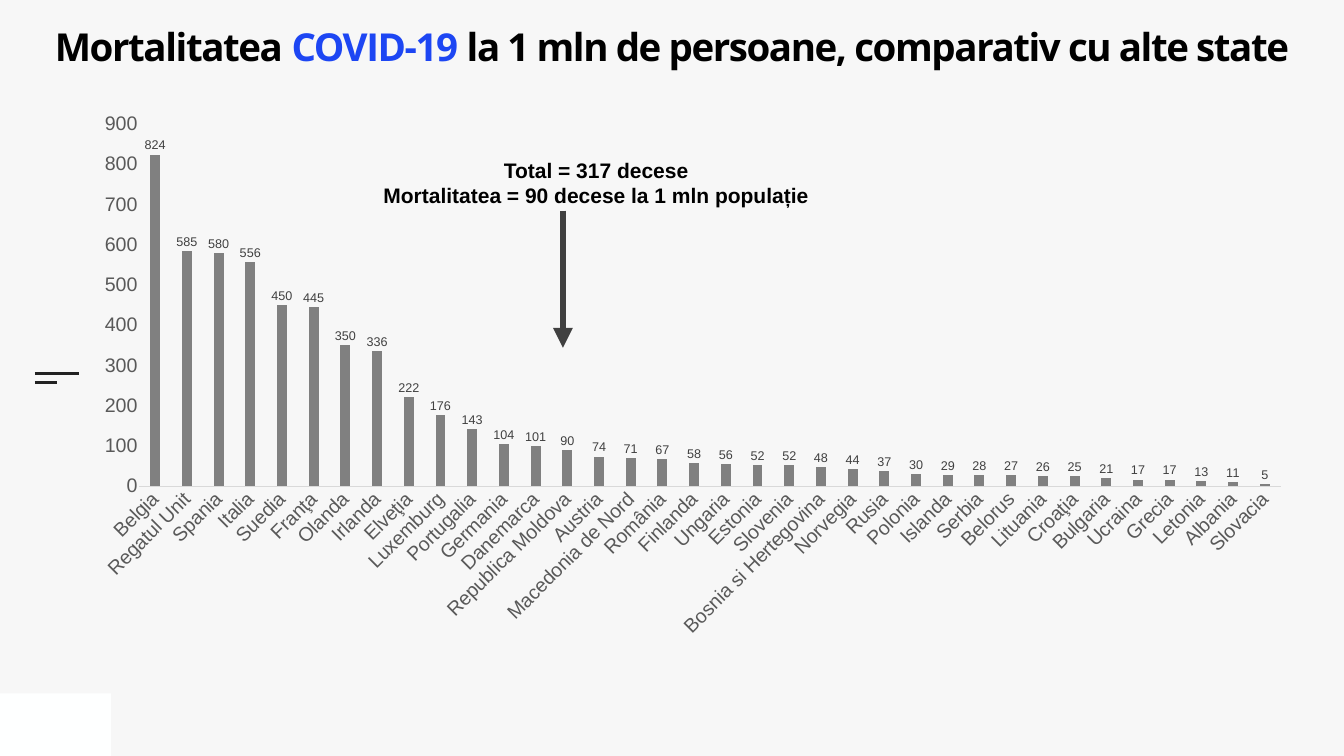
from dataclasses import dataclass

from lxml import etree
from pptx import Presentation
from pptx.chart.data import CategoryChartData
from pptx.dml.color import RGBColor
from pptx.enum.chart import XL_CHART_TYPE, XL_LABEL_POSITION, XL_TICK_MARK
from pptx.enum.shapes import MSO_CONNECTOR, MSO_SHAPE
from pptx.enum.text import MSO_ANCHOR, PP_ALIGN
from pptx.oxml.ns import qn
from pptx.util import Inches, Pt

COLUMNS = XL_CHART_TYPE.COLUMN_CLUSTERED
OUTSIDE = XL_LABEL_POSITION.OUTSIDE_END
NO_TICK = XL_TICK_MARK.NONE
STRAIGHT = MSO_CONNECTOR.STRAIGHT
RECT = MSO_SHAPE.RECTANGLE
TOP, MIDDLE = MSO_ANCHOR.TOP, MSO_ANCHOR.MIDDLE
CENTER = PP_ALIGN.CENTER


@dataclass(frozen=True)
class Theme:
    """Colours, fonts and type sizes of the slide."""
    background: str = "F7F7F7"
    corner: str = "FEFFFF"
    mark: str = "222222"
    text: str = "000000"
    accent: str = "1D46F3"
    bar: str = "808080"
    axis_text: str = "595959"
    axis_line: str = "D9D9D9"
    dark: str = "404040"
    heading_font: str = "Open Sans"
    body_font: str = "Arial"
    title_size: float = 55
    note_size: float = 30
    axis_size: float = 28
    label_size: float = 18


THEME = Theme()

DEATHS_PER_MILLION = {
    "Belgia": 824, "Regatul Unit": 585, "Spania": 580, "Italia": 556,
    "Suedia": 450, "Franţa": 445, "Olanda": 350, "Irlanda": 336,
    "Elveţia": 222, "Luxemburg": 176, "Portugalia": 143, "Germania": 104,
    "Danemarca": 101, "Republica Moldova": 90, "Austria": 74,
    "Macedonia de Nord": 71, "România": 67, "Finlanda": 58, "Ungaria": 56,
    "Estonia": 52, "Slovenia": 52, "Bosnia si Hertegovina": 48,
    "Norvegia": 44, "Rusia": 37, "Polonia": 30, "Islanda": 29, "Serbia": 28,
    "Belorus": 27, "Lituania": 26, "Croaţia": 25, "Bulgaria": 21,
    "Ucraina": 17, "Grecia": 17, "Letonia": 13, "Albania": 11, "Slovacia": 5,
}


def rgb(color):
    """Turn a hex string into a colour."""
    return RGBColor.from_string(color)


def set_font(font, name, size, color, bold=False):
    """Style a font object."""
    font.name, font.size, font.bold = name, Pt(size), bold
    font.color.rgb = rgb(color)


def add_line(s, x1, y1, x2, y2, color, width, arrow=False):
    """Draw a straight line, with an arrowhead at its end if asked."""
    line = s.shapes.add_connector(STRAIGHT, *map(Inches, (x1, y1, x2, y2)))
    line.line.color.rgb = rgb(color)
    line.line.width = Pt(width)
    if arrow:
        etree.SubElement(line.line._get_or_add_ln(), qn("a:tailEnd"), type="triangle")
    etree.SubElement(line._element.spPr, qn("a:effectLst"))


def add_text(s, box, lines, font, size, anchor, inset=0, spacing=0):
    """Add centred bold lines, each a list of (text, colour) runs."""
    tf = s.shapes.add_textbox(*map(Inches, box)).text_frame
    tf.word_wrap = True
    tf.vertical_anchor = anchor
    tf.margin_left = tf.margin_right = Inches(inset)
    tf.margin_top = tf.margin_bottom = Inches(inset)
    for i, runs in enumerate(lines):
        p = tf.add_paragraph() if i else tf.paragraphs[0]
        p.alignment = CENTER
        for text, color in runs:
            r = p.add_run()
            r.text = text
            set_font(r.font, font, size, color, bold=True)
            if spacing:
                r._r.get_or_add_rPr().set("spc", str(spacing * 100))


def add_decor(s, box):
    """Place the corner block and the two short marks at the left edge."""
    left, top, width, height = box
    corner = s.shapes.add_shape(
        RECT, Inches(left), Inches(top + height - 1.24), Inches(2.2), Inches(1.24))
    corner.shadow.inherit = False
    corner.fill.solid()
    corner.fill.fore_color.rgb = rgb(THEME.corner)
    corner.line.fill.background()
    x, middle = left + 0.69, top + height / 2
    for length, offset in ((0.88, -0.09), (0.44, 0.09)):
        y = middle + offset
        add_line(s, x, y, x + length, y, THEME.mark, 3)


def add_title(s, box):
    """Write the title with its highlighted word."""
    runs = [("Mortalitatea ", THEME.text), ("COVID-19", THEME.accent),
            (" la 1 mln de persoane, comparativ cu alte state", THEME.text)]
    add_text(s, box, [runs], THEME.heading_font, THEME.title_size, TOP, spacing=-2)


def add_mortality_chart(s, box):
    """Add the column chart of deaths per million by country."""
    data = CategoryChartData()
    data.categories = list(DEATHS_PER_MILLION)
    data.add_series("Series 1", list(DEATHS_PER_MILLION.values()))
    chart = s.shapes.add_chart(COLUMNS, *map(Inches, box), data).chart
    chart.has_legend = chart.has_title = False
    set_font(chart.font, THEME.body_font, THEME.axis_size, THEME.text)

    countries, deaths = chart.category_axis, chart.value_axis
    for axis in (countries, deaths):
        axis.major_tick_mark = axis.minor_tick_mark = NO_TICK
        axis.has_major_gridlines = False
        set_font(axis.tick_labels.font, THEME.body_font, THEME.axis_size, THEME.axis_text)
    countries.format.line.color.rgb = rgb(THEME.axis_line)
    countries.format.line.width = Pt(0.75)
    body = countries._element.find(qn("c:txPr")).find(qn("a:bodyPr"))
    body.set("rot", str(-45 * 60000))
    deaths.format.line.fill.background()
    deaths.minimum_scale, deaths.maximum_scale, deaths.major_unit = 0, 900, 100

    plot = chart.plots[0]
    plot.vary_by_categories = False
    plot.gap_width, plot.overlap = 219, -27
    fill = plot.series[0].format.fill
    fill.solid()
    fill.fore_color.rgb = rgb(THEME.bar)
    plot.has_data_labels = True
    labels = plot.data_labels
    labels.show_value = True
    labels.position = OUTSIDE
    set_font(labels.font, THEME.body_font, THEME.label_size, THEME.dark)


def add_moldova_note(s, box):
    """Write the note and point its arrow down at the Moldova column."""
    left, top, width, height = box
    x, y = left + 4.01, top + height
    add_line(s, x, y, x, y + 2.72, THEME.dark, 9.5, arrow=True)
    lines = ("Total = 317 decese", "Mortalitatea = 90 decese la 1 mln populație")
    add_text(s, box, [[(line, THEME.text)] for line in lines],
             THEME.body_font, THEME.note_size, MIDDLE, inset=0.06)


def main():
    """Build the slide and save it."""
    prs = Presentation()
    prs.slide_width, prs.slide_height = Inches(26.67), Inches(15)
    s = prs.slides.add_slide(prs.slide_layouts[6])
    s.background.fill.solid()
    s.background.fill.fore_color.rgb = rgb(THEME.background)
    add_decor(s, (0, 0, 26.67, 15))
    add_mortality_chart(s, (1.57, 2.03, 24.33, 10.83))
    add_title(s, (0, 0.45, 26.67, 1.58))
    add_moldova_note(s, (7.16, 3.06, 9.34, 1.12))
    prs.save("out.pptx")


if __name__ == "__main__":
    main()
